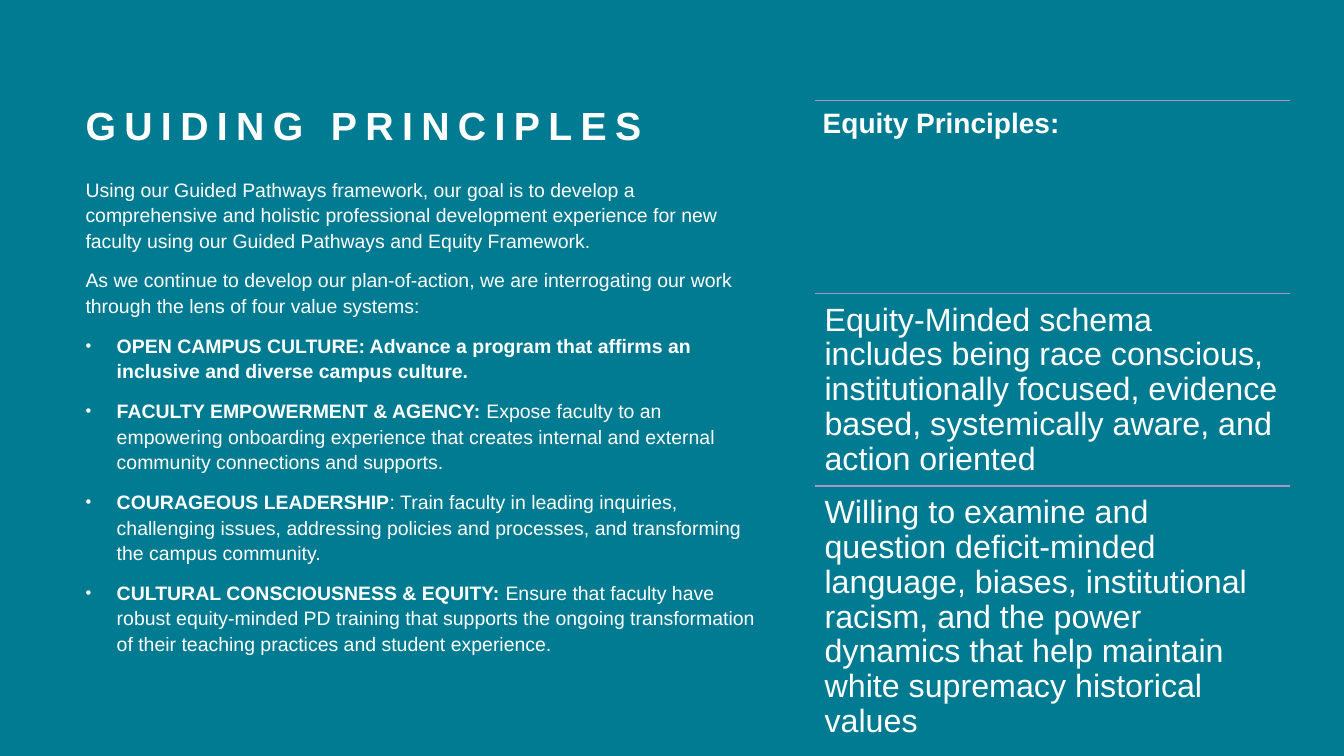
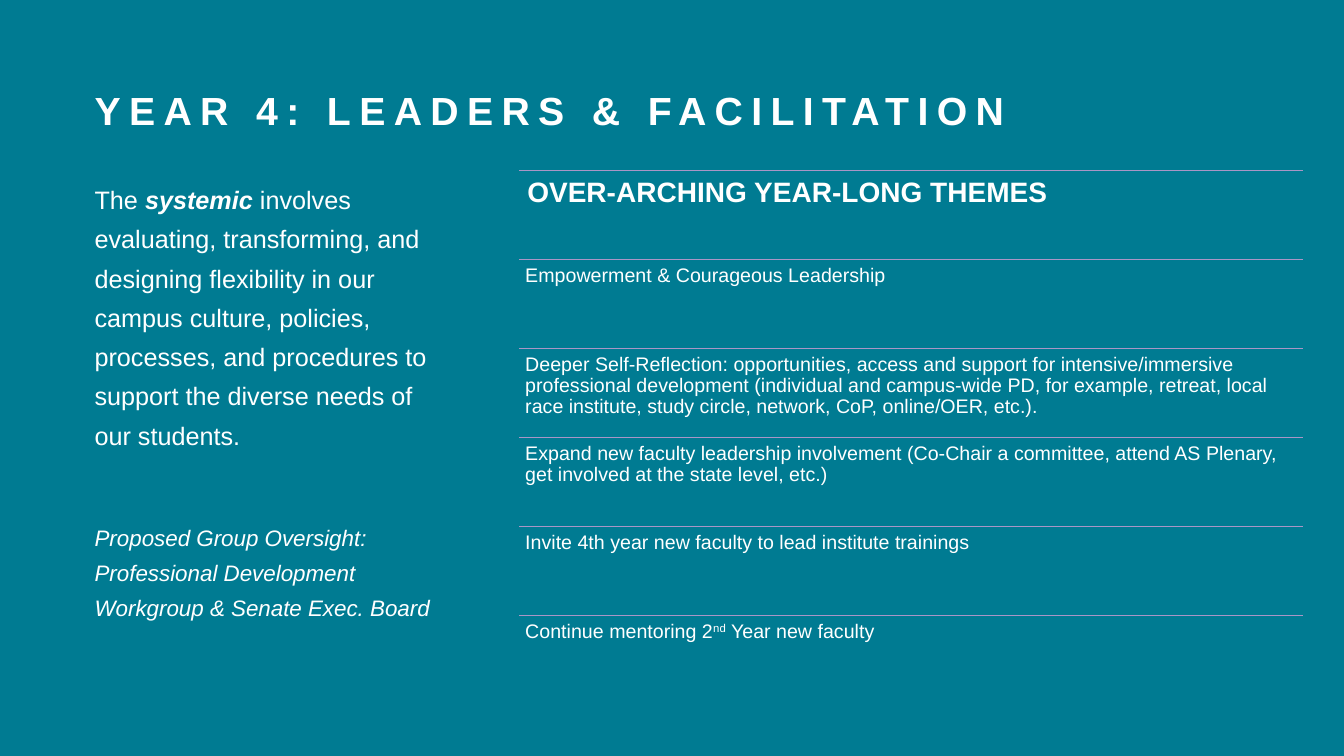
from lxml.etree import SubElement
from pptx import Presentation
from pptx.dml.color import RGBColor
from pptx.enum.shapes import MSO_CONNECTOR
from pptx.enum.text import MSO_ANCHOR
from pptx.oxml.ns import qn
from pptx.util import Inches, Pt

TEAL = RGBColor(0x00, 0x7B, 0x92)
WHITE = RGBColor(0xFF, 0xFF, 0xFF)
LILAC = RGBColor(0xA9, 0x96, 0xC6)
FONT = "Arial"
BULLET_INDENT = 0.31

# Content: a paragraph is a list of (text, style) runs; styles: b bold, i italic, ^ superscript
SLIDES = [
    {
        "title": "GUIDING PRINCIPLES",
        "title_box": (0.75, 0.53, 7.48, 0.99),
        "body_box": (0.75, 1.69, 6.94, 5.04),
        "body_spacing": 1.1,
        "body": [
            {"size": 13.9, "runs": [
                ("Using our Guided Pathways framework, our goal is to develop a comprehensive and "
                 "holistic professional development experience for new faculty using our Guided "
                 "Pathways and Equity Framework.", "")]},
            {"size": 13.9, "runs": [
                ("As we continue to develop our plan-of-action, we are interrogating our work "
                 "through the lens of four value systems:", "")]},
            {"size": 13.9, "bullet": True, "runs": [
                ("OPEN CAMPUS CULTURE: Advance a program that affirms an inclusive and diverse "
                 "campus culture.", "b")]},
            {"size": 13.9, "bullet": True, "runs": [
                ("FACULTY EMPOWERMENT & AGENCY: ", "b"),
                ("Expose faculty to an empowering onboarding experience that creates internal and "
                 "external community connections and supports.", "")]},
            {"size": 13.9, "bullet": True, "runs": [
                ("COURAGEOUS LEADERSHIP", "b"),
                (": Train faculty in leading inquiries, challenging issues, addressing policies "
                 "and processes, and transforming the campus community.", "")]},
            {"size": 13.9, "bullet": True, "runs": [
                ("CULTURAL CONSCIOUSNESS & EQUITY: ", "b"),
                ("Ensure that faculty have robust equity-minded PD training that supports the "
                 "ongoing transformation of their teaching practices and student experience.", "")]},
        ],
        "list_box": (8.08, 1, 4.71, 5.73),
        "row_size": 23,
        "row_inset": 0.1,
        "rows": [
            [("Equity Principles:", "b")],
            [("Equity-Minded schema includes being race conscious, institutionally focused, "
              "evidence based, systemically aware, and action oriented", "")],
            [("Willing to examine and question deficit-minded language, biases, institutional "
              "racism, and the power dynamics that help maintain white supremacy historical "
              "values", "")],
        ],
    },
    {
        "title": "YEAR 4: LEADERS & FACILITATION",
        "title_box": (0.84, 0.4, 10.1, 0.97),
        "body_box": (0.84, 1.69, 3.76, 4.33),
        "body_spacing": 1.3,
        "body": [
            {"size": 18, "runs": [
                ("The ", ""), ("systemic", "bi"),
                (" involves evaluating, transforming, and designing flexibility in our campus "
                 "culture, policies, processes, and procedures to support the diverse needs of "
                 "our students.", "")]},
            {"size": 16, "before": 47, "runs": [
                ("Proposed Group Oversight: Professional Development Workgroup & Senate Exec. "
                 "Board", "i")]},
        ],
        "list_box": (5.15, 1.69, 7.77, 5.3),
        "row_size": 14,
        "row_inset": 0.06,
        "rows": [
            [("OVER-ARCHING YEAR-LONG THEMES", "b")],
            [("Empowerment & Courageous Leadership", "")],
            [("Deeper Self-Reflection: opportunities, access and support for intensive/immersive "
              "professional development (individual and campus-wide PD, for example, retreat, local "
              "race institute, study circle, network, CoP, online/OER, etc.).", "")],
            [("Expand new faculty leadership involvement (Co-Chair a committee, attend AS "
              "Plenary, get involved at the state level, etc.)", "")],
            [("Invite 4th year new faculty to lead institute trainings", "")],
            [("Continue mentoring 2", ""), ("nd", "^"), (" Year new faculty", "")],
        ],
    },
]


def add_text_frame(slide, box, inset=None, anchor=MSO_ANCHOR.TOP):
    frame = slide.shapes.add_textbox(*map(Inches, box)).text_frame
    frame.word_wrap = True
    frame.vertical_anchor = anchor
    if inset is not None:
        frame.margin_left = frame.margin_right = Inches(inset)
        frame.margin_top = frame.margin_bottom = Inches(inset)
    return frame


def add_bullet(paragraph):
    properties = paragraph._p.get_or_add_pPr()
    properties.set("marL", str(Inches(BULLET_INDENT)))
    properties.set("indent", str(-Inches(BULLET_INDENT)))
    SubElement(properties, qn("a:buSzPct"), val="85000")
    SubElement(properties, qn("a:buFont"), typeface=FONT)
    SubElement(properties, qn("a:buChar"), char="•")


def fill_paragraph(paragraph, runs, size, spacing, before=0, bullet=False, tracking=0):
    paragraph.line_spacing = spacing
    paragraph.space_before = Pt(before)
    if bullet:
        add_bullet(paragraph)
    paragraph.font.name = FONT
    paragraph.font.size = Pt(size)
    paragraph.font.color.rgb = WHITE
    for text, style in runs:
        run = paragraph.add_run()
        run.text = text
        run.font.bold = "b" in style
        run.font.italic = "i" in style
        if "^" in style:
            run._r.get_or_add_rPr().set("baseline", "30000")
        if tracking:
            run._r.get_or_add_rPr().set("spc", str(tracking * 100))


def add_title(slide, text, box):
    frame = add_text_frame(slide, box, anchor=MSO_ANCHOR.BOTTOM)
    fill_paragraph(frame.paragraphs[0], [(text, "b")], 28, 1.2, tracking=6)


def add_body(slide, paragraphs, box, spacing):
    frame = add_text_frame(slide, box)
    for index, item in enumerate(paragraphs):
        paragraph = frame.add_paragraph() if index else frame.paragraphs[0]
        fill_paragraph(paragraph, item["runs"], item["size"], spacing,
                       item.get("before", 10), item.get("bullet", False))


def add_rule(slide, left, top, width):
    rule = slide.shapes.add_connector(MSO_CONNECTOR.STRAIGHT, Inches(left), Inches(top),
                                      Inches(left + width), Inches(top))
    rule.line.color.rgb = LILAC
    rule.line.width = Pt(1)
    SubElement(rule._element.spPr, qn("a:effectLst"))


def add_ruled_list(slide, rows, box, size, inset):
    """Equal rows, each under a thin rule; the first row is the heading."""
    left, top, width, height = box
    row_height = height / len(rows)
    for index, runs in enumerate(rows):
        row_top = top + index * row_height
        row_size, row_inset = (size, inset) if index else (20, 0.08)
        add_rule(slide, left, row_top, width)
        frame = add_text_frame(slide, (left, row_top, width, row_height), row_inset)
        fill_paragraph(frame.paragraphs[0], runs, row_size, 0.9)


def main():
    presentation = Presentation()
    presentation.slide_width = Inches(13.33)
    presentation.slide_height = Inches(7.5)

    # The background is shared by all slides
    background = presentation.slide_master.background.fill
    background.solid()
    background.fore_color.rgb = TEAL

    for content in SLIDES:
        slide = presentation.slides.add_slide(presentation.slide_layouts[6])
        add_title(slide, content["title"], content["title_box"])
        add_body(slide, content["body"], content["body_box"], content["body_spacing"])
        add_ruled_list(slide, content["rows"], content["list_box"],
                       content["row_size"], content["row_inset"])

    presentation.save("out.pptx")


if __name__ == "__main__":
    main()
